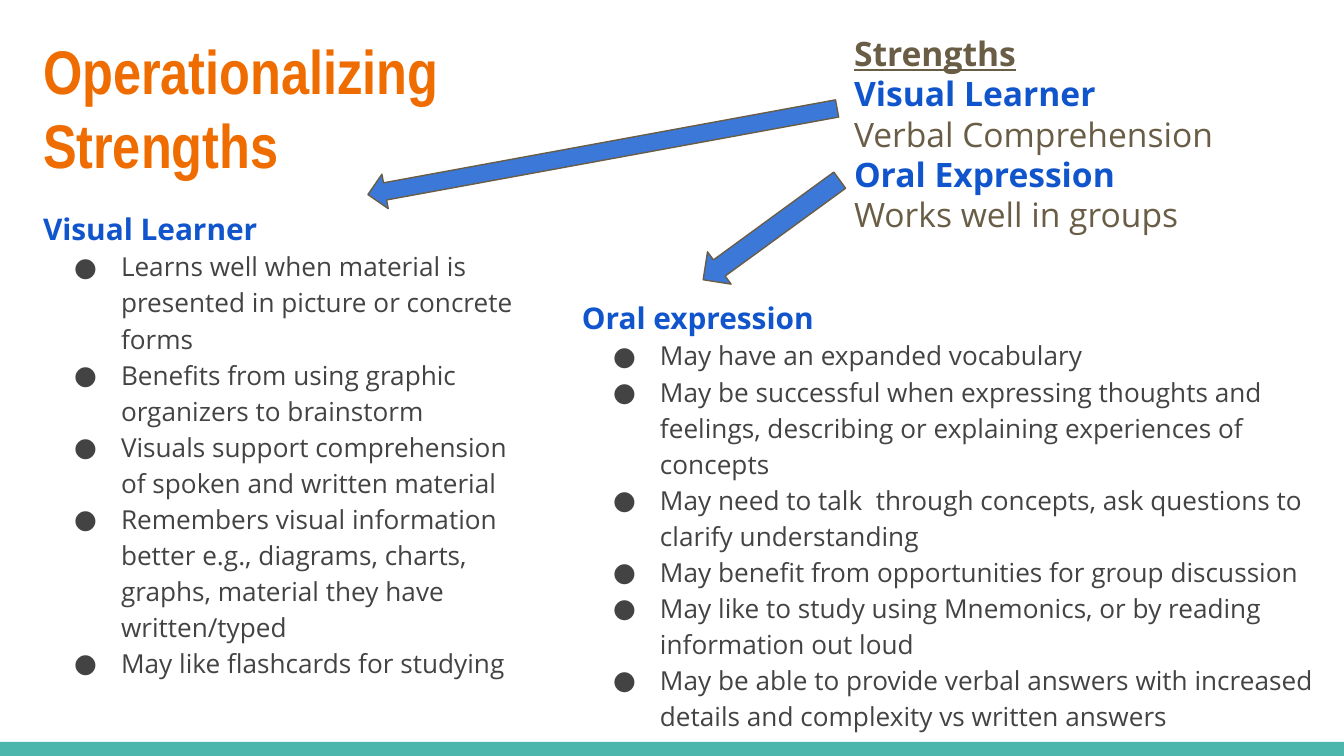
from dataclasses import dataclass

from lxml import etree
from pptx import Presentation
from pptx import util as u
from pptx.dml.color import RGBColor
from pptx.enum import shapes, text
from pptx.oxml import ns

SCALE = 914400 / 134.4


def px(n):
    """Turn whole px into EMU."""
    return u.Emu(round(n * SCALE))


@dataclass(frozen=True)
class Theme:
    """Colours, fonts and type sizes of the deck."""
    title: str = "EF6C00"
    accent: str = "1155CC"
    muted: str = "695D46"
    body: str = "434343"
    arrow: str = "3C78D8"
    bar: str = "4DB6AC"
    title_font: str = "Arial Narrow"
    body_font: str = "Open Sans"
    title_size: int = 33
    summary_size: int = 18
    heading_size: int = 16
    bullet_size: int = 14


class Deck:
    """Hold the theme and the current slide."""

    def __init__(self, prs, theme):
        """Add a title-only slide."""
        self.theme = theme
        self.s = prs.slides.add_slide(prs.slide_layouts[5])

    def frame(self, sp):
        """Give a text shape its margins, wrapping and anchor."""
        tf = sp.text_frame
        tf.word_wrap = True
        tf.auto_size = text.MSO_AUTO_SIZE.NONE
        tf.vertical_anchor = text.MSO_ANCHOR.TOP
        tf.margin_left = tf.margin_top = tf.margin_right = tf.margin_bottom = px(13)
        return tf

    def textbox(self, box, lines):
        """Add a text box with one paragraph per line."""
        tf = self.frame(self.s.shapes.add_textbox(*map(px, box)))
        tf.text = "\n".join(lines)
        return tf

    def style(self, p, font, size, color, bold=False, underline=False):
        """Format the runs of a paragraph."""
        p.alignment = text.PP_ALIGN.LEFT
        for r in p.runs:
            r.font.name = font
            r.font.size = u.Pt(size)
            r.font.bold = bold
            r.font.underline = underline
            r.font.color.rgb = RGBColor.from_string(color)

    def bullet(self, p):
        """Give a paragraph a hanging round bullet."""
        pPr = p._p.get_or_add_pPr()
        pPr.set("marL", str(px(78)))
        pPr.set("indent", str(px(-47)))
        clr = etree.SubElement(pPr, ns.qn("a:buClr"))
        etree.SubElement(clr, ns.qn("a:srgbClr"), val=self.theme.body)
        etree.SubElement(pPr, ns.qn("a:buFont"), typeface=self.theme.body_font)
        etree.SubElement(pPr, ns.qn("a:buChar"), char="●")

    def title(self, box, words):
        """Move and format the title placeholder."""
        t = self.theme
        sp = self.s.shapes.title
        sp.left, sp.top, sp.width, sp.height = map(px, box)
        tf = self.frame(sp)
        tf.text = words
        self.style(tf.paragraphs[0], t.title_font, t.title_size, t.title, bold=True)

    def summary(self, box, heading, strengths, chosen):
        """Add the list of strengths with the chosen ones marked."""
        t = self.theme
        head, *rest = self.textbox(box, [heading, *strengths]).paragraphs
        self.style(head, t.body_font, t.summary_size, t.muted, bold=True, underline=True)
        for p in rest:
            marked = p.text in chosen
            color = t.accent if marked else t.muted
            self.style(p, t.body_font, t.summary_size, color, bold=marked)

    def details(self, box, heading, items):
        """Add a heading with bullets below it."""
        t = self.theme
        tf = self.textbox(box, [heading, *items])
        for p in tf.paragraphs:
            p.line_spacing = 1.15
        head, *rest = tf.paragraphs
        self.style(head, t.body_font, t.heading_size, t.accent, bold=True)
        for p in rest:
            self.style(p, t.body_font, t.bullet_size, t.body)
            self.bullet(p)

    def shape(self, kind, box, fill, line=None, rotation=0):
        """Add a filled preset shape."""
        sp = self.s.shapes.add_shape(kind, *map(px, box))
        sp.shadow.inherit = False
        sp.rotation = rotation
        sp.fill.solid()
        sp.fill.fore_color.rgb = RGBColor.from_string(fill)
        if line:
            sp.line.color.rgb = RGBColor.from_string(line)
            sp.line.width = u.Pt(0.75)
        else:
            sp.line.fill.background()

    def bar(self, box):
        """Add the footer bar."""
        self.shape(shapes.MSO_SHAPE.RECTANGLE, box, self.theme.bar)

    def arrow(self, box, rotation):
        """Add a block arrow that points from a strength to its details."""
        self.shape(shapes.MSO_SHAPE.LEFT_ARROW, box, self.theme.arrow,
                   self.theme.muted, rotation)


def main():
    """Build the slide."""
    prs = Presentation()
    prs.slide_width, prs.slide_height = px(1344), px(756)
    deck = Deck(prs, Theme())
    deck.bar((0, 742, 1344, 14))
    deck.title((30, 20, 626, 103), "Operationalizing Strengths")
    deck.summary(
        (841, 20, 390, 242), "Strengths",
        ["Visual Learner", "Verbal Comprehension", "Oral Expression", "Works well in groups"],
        {"Visual Learner", "Oral Expression"})
    deck.details((30, 192, 511, 372), "Visual Learner", [
        "Learns well when material is presented in picture or concrete forms",
        "Benefits from using graphic organizers to brainstorm",
        "Visuals support comprehension of spoken and written material",
        "Remembers visual information better e.g., diagrams, charts, graphs, "
        "material they have written/typed",
        "May like flashcards for studying",
    ])
    deck.details((569, 281, 775, 439), "Oral expression", [
        "May have an expanded vocabulary",
        "May be successful when expressing thoughts and feelings, "
        "describing or explaining experiences of concepts",
        "May need to talk  through concepts, ask questions to clarify understanding",
        "May benefit from opportunities for group discussion",
        "May like to study using Mnemonics, or by reading information out loud",
        "May be able to provide verbal answers with increased details "
        "and complexity vs written answers",
    ])
    deck.arrow((364, 134, 477, 35), 349.6)
    deck.arrow((687, 210, 169, 40), 323.9)
    prs.save("out.pptx")


if __name__ == "__main__":
    main()
